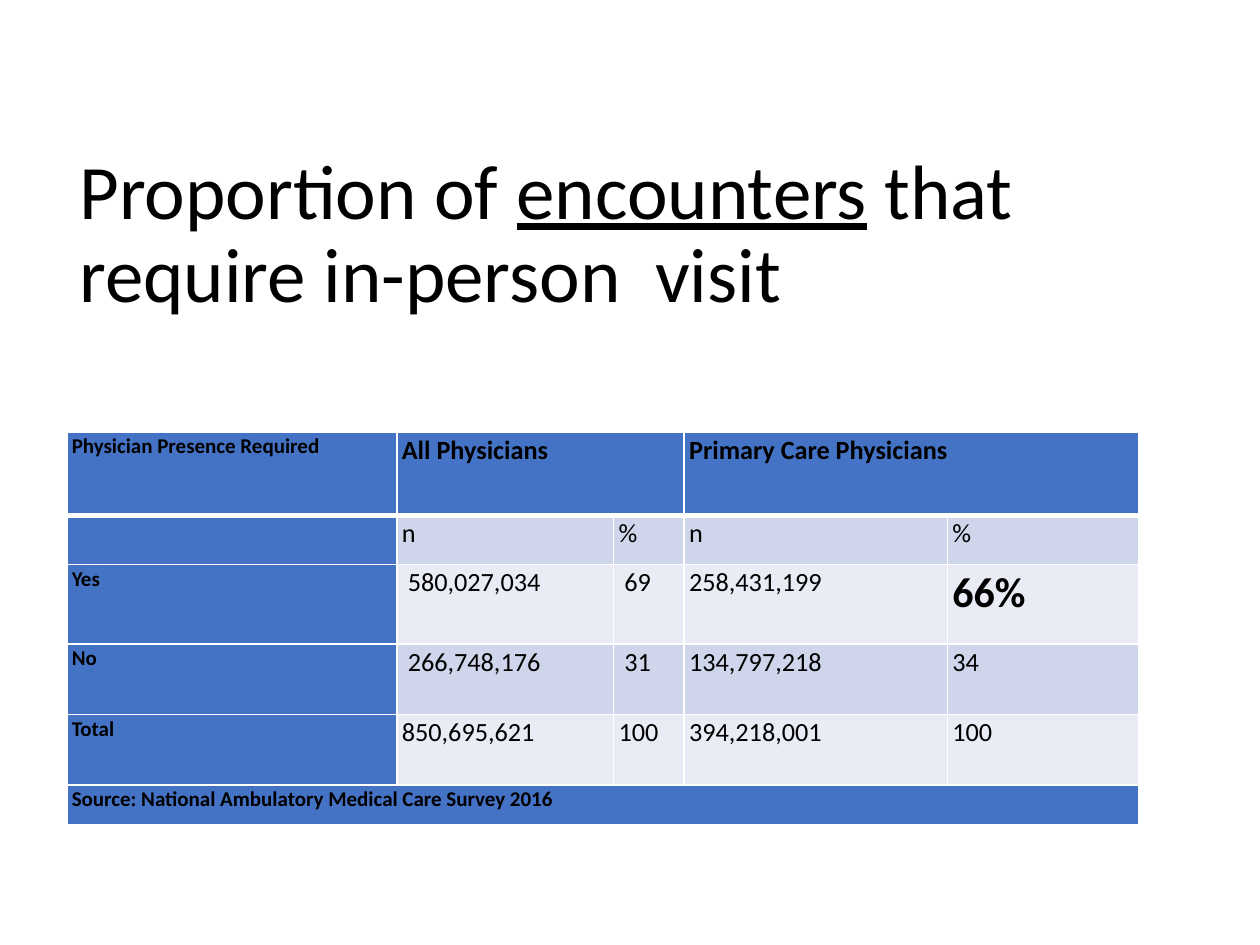
from lxml import etree
from pptx import Presentation
from pptx.dml.color import RGBColor
from pptx.enum import text
from pptx.oxml.ns import qn
from pptx.util import Inches, Pt

# Content
TITLE = [("Proportion of ", False), ("encounters", True),
         (" that require in-person  visit", False)]
ROWS = [
    ["Physician Presence Required", "All Physicians", "", "Primary Care Physicians", ""],
    ["", "n", "%", "n", "%"],
    ["Yes", " 580,027,034", " 69", "258,431,199", "66%"],
    ["No", " 266,748,176", " 31", "134,797,218", "34"],
    ["Total", "850,695,621", "100", "394,218,001", "100"],
    ["Source: National Ambulatory Medical Care Survey 2016", "", "", "", ""],
]
MERGES = [((0, 1), (0, 2)), ((0, 3), (0, 4)), ((5, 0), (5, 4))]
KEY_FIGURE = (2, 4)

# Layout and style
COL_WIDTHS = [2.62, 1.72, 0.56, 2.09, 1.52]
ROW_HEIGHTS = [0.66, 0.39, 0.63, 0.56, 0.56, 0.32]
COLORS = {"header": "4472C4", "odd": "CFD5EA", "even": "E9EBF5",
          "border": "FFFFFF", "text": "000000"}
FONT = "Calibri"


def style_font(font, size, bold=False):
    font.name, font.size, font.bold = FONT, Pt(size), bold
    font.color.rgb = RGBColor.from_string(COLORS["text"])


def set_borders(cell, widths):
    """Add cell edges, given as {tag: points}, ahead of the fill."""
    props = cell._tc.get_or_add_tcPr()
    for index, (tag, width) in enumerate(widths.items()):
        line = etree.Element(qn(f"a:{tag}"), w=str(Pt(width)))
        fill = etree.SubElement(line, qn("a:solidFill"))
        etree.SubElement(fill, qn("a:srgbClr"), val=COLORS["border"])
        props.insert(index, line)


def format_cell(cell, row, col, wording):
    is_header = row in (0, len(ROWS) - 1) or col == 0
    band = "header" if is_header else "odd" if row % 2 else "even"
    cell.fill.solid()
    cell.fill.fore_color.rgb = RGBColor.from_string(COLORS[band])
    cell.margin_left = cell.margin_right = Inches(0.04)
    cell.margin_top = cell.margin_bottom = 0
    set_borders(cell, {"lnL": 1, "lnR": 1, "lnT": 3 if row == 1 else 1,
                       "lnB": 3 if row == 0 else 1})
    if not wording:
        return

    # Table cells draw with run fonts, not paragraph defaults
    is_key = (row, col) == KEY_FIGURE
    size = 24 if is_key else 12 if col == 0 else 15
    paragraph = cell.text_frame.paragraphs[0]
    paragraph.line_spacing = 1.07
    run = paragraph.add_run()
    run.text = wording
    style_font(run.font, size, is_header or is_key)


prs = Presentation()
prs.slide_width, prs.slide_height = Inches(10), Inches(7.5)
slide = prs.slides.add_slide(prs.slide_layouts[5])

# Title
title = slide.shapes.title
title.left, title.top = Inches(0.53), Inches(1.12)
title.width, title.height = Inches(7.84), Inches(1.5)
title.text_frame.vertical_anchor = text.MSO_ANCHOR.MIDDLE
heading = title.text_frame.paragraphs[0]
heading.alignment = text.PP_ALIGN.LEFT
heading.line_spacing = 0.9
style_font(heading.font, 44)
for wording, underlined in TITLE:
    run = heading.add_run()
    run.text = wording
    if underlined:
        run.font.underline = True

# Encounter table
table = slide.shapes.add_table(
    len(ROWS), len(COL_WIDTHS), Inches(0.53), Inches(3.43),
    Inches(sum(COL_WIDTHS)), Inches(sum(ROW_HEIGHTS))).table
for column, width in zip(table.columns, COL_WIDTHS):
    column.width = Inches(width)
for table_row, height in zip(table.rows, ROW_HEIGHTS):
    table_row.height = Inches(height)
for row, values in enumerate(ROWS):
    for col, wording in enumerate(values):
        format_cell(table.cell(row, col), row, col, wording)
for first, last in MERGES:
    table.cell(*first).merge(table.cell(*last))

prs.save("out.pptx")
